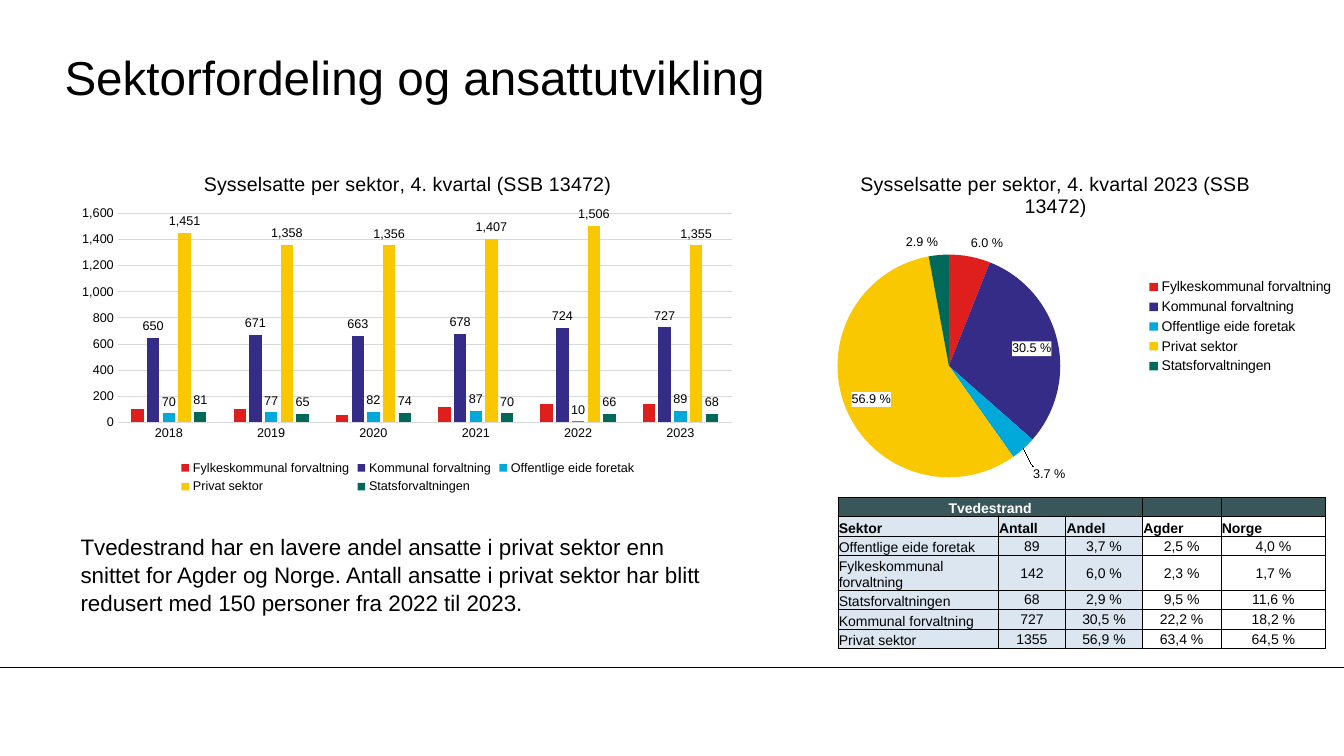
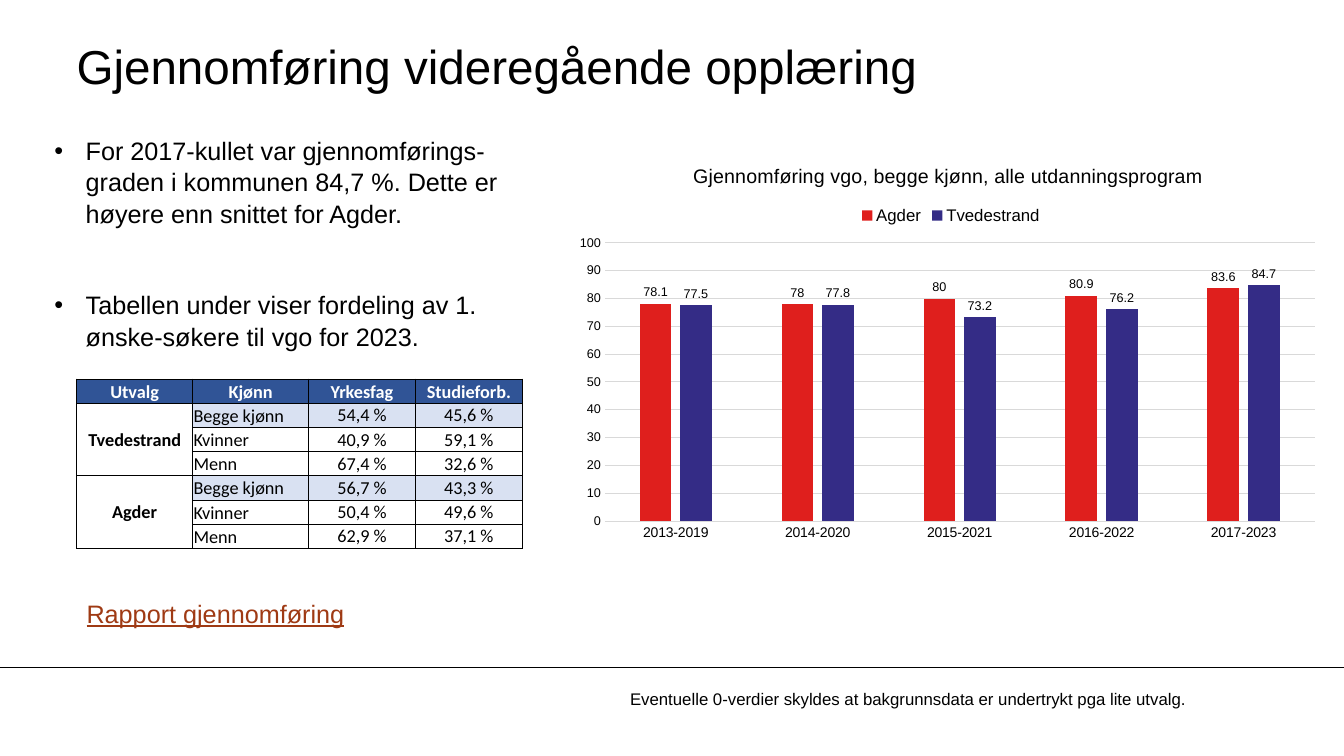
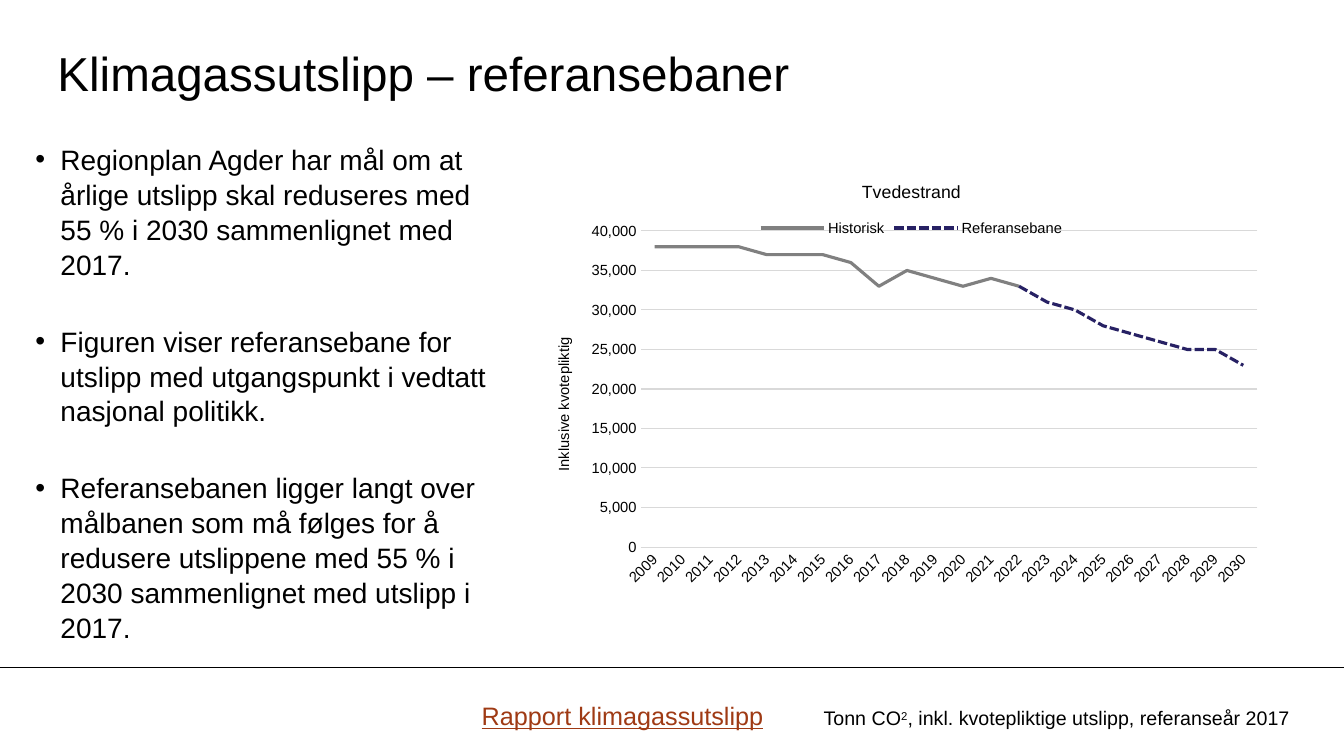
"""Build three slides on jobs, schooling and emissions in Tvedestrand."""
from dataclasses import dataclass

from lxml.etree import SubElement as sub
from pptx import Presentation
from pptx.chart.data import CategoryChartData as ChartData
from pptx.dml.color import RGBColor as RGB
from pptx.enum.chart import XL_CHART_TYPE as KIND
from pptx.enum.chart import XL_LABEL_POSITION as SPOT
from pptx.enum.chart import XL_LEGEND_POSITION as SIDE
from pptx.enum.chart import XL_TICK_MARK as TICK
from pptx.enum.dml import MSO_LINE
from pptx.enum.text import MSO_ANCHOR as ANCHOR
from pptx.enum.text import MSO_AUTO_SIZE as AUTO
from pptx.enum.text import PP_ALIGN as ALIGN
from pptx.oxml.ns import qn
from pptx.util import Pt

PX = 9144


@dataclass(frozen=True)
class Theme:
    font: str = "Arial"
    ink: str = "000000"
    white: str = "FFFFFF"
    link: str = "9F3A14"
    grid: str = "D9D9D9"
    teal: str = "39575B"
    ice: str = "DCE6F1"
    blue: str = "305496"
    pale: str = "D9E1F2"
    red: str = "DF1F1D"
    navy: str = "342C86"
    sky: str = "00A9DA"
    gold: str = "FAC800"
    green: str = "00695A"
    gray: str = "808080"
    dusk: str = "272164"
    title: int = 34
    list: int = 20
    text: int = 18
    body: int = 16
    note: int = 14
    fine: int = 12
    tick: int = 9


T = Theme()


def write(frame, text, size=T.text, color=T.ink, font=T.font, bold=False, under=False,
          align=ALIGN.LEFT, line=None, dent=0, gap=0):
    """Fill a frame; newlines part paragraphs and carets wrap superscripts."""
    frame.word_wrap = True
    for i, words in enumerate(text.split("\n")):
        para = frame.add_paragraph() if i else frame.paragraphs[0]
        para.alignment = align
        para.space_before = Pt(gap if i else 0)
        if line:
            para.line_spacing = line
        if dent:
            props = para._p.get_or_add_pPr()
            props.set("marL", str(dent * PX))
            props.set("indent", str(-dent * PX))
            sub(props, qn("a:buChar")).set("char", "•")
        for j, part in enumerate(words.split("^") if words else []):
            run = para.add_run()
            run.text = part
            look = run.font
            look.name, look.size, look.bold, look.underline = font, Pt(size), bold, under
            look.color.rgb = RGB.from_string(color)
            if j % 2:
                run._r.get_or_add_rPr().set("baseline", "30000")
        para._p.get_or_add_endParaRPr().set("sz", str(int(size * 100)))


def place(part, left, top, wide=None, high=None, inner=False):
    """Pin a chart part by fractions of the chart."""
    for old in part.findall(qn("c:layout")):
        part.remove(old)
    layout = part.makeelement(qn("c:layout"))
    spot = sub(layout, qn("c:manualLayout"))
    pairs = [("layoutTarget", "inner")] if inner else []
    if wide or part.tag == qn("c:legend"):
        pairs += [("xMode", "edge"), ("yMode", "edge")]
    pairs += [("x", left), ("y", top)]
    if wide:
        pairs += [("w", wide), ("h", high)]
    for name, value in pairs:
        sub(spot, qn("c:" + name)).set("val", str(value))
    if inner:
        part.insert(0, layout)
    else:
        part[0].addnext(layout)


deck = Presentation()
deck.slide_width, deck.slide_height = 1333 * PX, 750 * PX

slides = []
for form, left, top, text in [
    (5, 64, 38, "Sektorfordeling og ansattutvikling"),
    (1, 76, 27, "Gjennomføring videregående opplæring"),
    (1, 57, 34, "Klimagassutslipp – referansebaner"),
]:
    slide = deck.slides.add_slide(deck.slide_layouts[form])
    head = slide.shapes.title
    head.left, head.top, head.width, head.height = [n * PX for n in (left, top, 1110, 75)]
    frame = head.text_frame
    frame.auto_size, frame.vertical_anchor = AUTO.NONE, ANCHOR.MIDDLE
    frame.margin_left = frame.margin_right = frame.margin_top = frame.margin_bottom = 0
    write(frame, text, size=T.title)
    slides.append(slide)
jobs, school, climate = slides

rule = jobs.shapes.add_connector(1, 0, 662 * PX, 1333 * PX, 662 * PX)
rule.line.color.rgb, rule.line.width = RGB.from_string(T.ink), Pt(0.75)
sub(rule._element.spPr, qn("a:effectLst"))
rule._element.nvCxnSpPr.cNvPr.set("id", "20")
deck.slide_master.shapes._spTree.append(rule._element)

for slide, box, inset, text, look in [
    (school, (44, 128, 517, 222), (10, 5),
     "For 2017-kullet var gjennomførings-graden i kommunen 84,7 %. Dette er høyere enn "
     "snittet for Agder.\n"
     "Tabellen under viser fordeling av 1. ønske-søkere til vgo for 2023.",
     dict(size=T.text, dent=31, gap=43)),
    (climate, (35, 140, 462, 492), (0, 0),
     "Regionplan Agder har mål om at årlige utslipp skal reduseres med 55 % i 2030 "
     "sammenlignet med 2017.\n"
     "Figuren viser referansebane for utslipp med utgangspunkt i vedtatt nasjonal politikk.\n"
     "Referansebanen ligger langt over målbanen som må følges for å redusere utslippene med "
     "55 % i 2030 sammenlignet med utslipp i 2017.",
     dict(size=T.list, dent=25, gap=30)),
]:
    body = slide.placeholders[1]
    body.left, body.top, body.width, body.height = [n * PX for n in box]
    frame = body.text_frame
    frame.auto_size, frame.vertical_anchor = AUTO.NONE, ANCHOR.TOP
    frame.margin_left = frame.margin_right = inset[0] * PX
    frame.margin_top = frame.margin_bottom = inset[1] * PX
    write(frame, text, line=1.04, **look)

link = dict(color=T.link, under=True)
for slide, box, text, look in [
    (jobs, (70, 523, 641, 91),
     "Tvedestrand har en lavere andel ansatte i privat sektor enn snittet for Agder og Norge. "
     "Antall ansatte i privat sektor har blitt redusert med 150 personer fra 2022 til 2023.",
     dict(size=T.body)),
    (school, (615, 678, 585, 30),
     "Eventuelle 0-verdier skyldes at bakgrunnsdata er undertrykt pga lite utvalg.",
     dict(size=T.fine)),
    (school, (76, 587, 281, 40), "Rapport gjennomføring", link),
    (climate, (807, 695, 509, 34),
     "Tonn CO^2^, inkl. kvotepliktige utslipp, referanseår 2017", dict(size=T.note)),
    (climate, (468, 689, 316, 40), "Rapport klimagassutslipp", link),
]:
    note = slide.shapes.add_textbox(*[n * PX for n in box])
    write(note.text_frame, text, line=1.04, **look)

tables = [
    dict(slide=jobs, at=(831, 493), cols=(159, 67, 76, 78, 104),
         rows=(19, 20, 19, 34, 19, 20, 19), size=10, font=T.font, head=T.teal,
         merge=[(0, 0, 0, 2)],
         fill=lambda r, c: T.ice if c < 3 else None,
         bold=lambda r, c: r < 2,
         left=lambda r, c: r == 1 or c == 0,
         data=[
             ("Tvedestrand", "", "", "", ""),
             ("Sektor", "Antall", "Andel", "Agder", "Norge"),
             ("Offentlige eide foretak", "89", "3,7 %", "2,5 %", "4,0 %"),
             ("Fylkeskommunal forvaltning", "142", "6,0 %", "2,3 %", "1,7 %"),
             ("Statsforvaltningen", "68", "2,9 %", "9,5 %", "11,6 %"),
             ("Kommunal forvaltning", "727", "30,5 %", "22,2 %", "18,2 %"),
             ("Privat sektor", "1355", "56,9 %", "63,4 %", "64,5 %"),
         ]),
    dict(slide=school, at=(76, 376), cols=(115, 115, 106, 106), rows=(24,) * 7,
         size=13, font="Calibri", head=T.blue, merge=[(1, 0, 3, 0), (4, 0, 6, 0)],
         fill=lambda r, c: T.pale if c and r in (1, 4) else T.white,
         bold=lambda r, c: r == 0 or c == 0,
         left=lambda r, c: c == 1,
         data=[
             ("Utvalg", "Kjønn", "Yrkesfag", "Studieforb."),
             ("Tvedestrand", "Begge kjønn", "54,4 %", "45,6 %"),
             ("", "Kvinner", "40,9 %", "59,1 %"),
             ("", "Menn", "67,4 %", "32,6 %"),
             ("Agder", "Begge kjønn", "56,7 %", "43,3 %"),
             ("", "Kvinner", "50,4 %", "49,6 %"),
             ("", "Menn", "62,9 %", "37,1 %"),
         ]),
]
for plan in tables:
    cols, rows = plan["cols"], plan["rows"]
    area = [n * PX for n in (*plan["at"], sum(cols), sum(rows))]
    table = plan["slide"].shapes.add_table(len(rows), len(cols), *area).table
    table.first_row = table.horz_banding = False
    for col, wide in zip(table.columns, cols):
        col.width = wide * PX
    for r, (row, high) in enumerate(zip(table.rows, rows)):
        row.height = high * PX
        for c, text in enumerate(plan["data"][r]):
            cell = table.cell(r, c)
            left = r > 0 and plan["left"](r, c)
            cell.margin_left = cell.margin_right = cell.margin_top = PX
            cell.margin_bottom = 0
            cell.vertical_anchor = ANCHOR.BOTTOM if left or r == 0 else ANCHOR.MIDDLE
            props = cell._tc.get_or_add_tcPr()
            for side in "LRTB":
                edge = sub(props, qn("a:ln" + side), w=str(Pt(0.5)))
                sub(sub(edge, qn("a:solidFill")), qn("a:srgbClr"), val=T.ink)
            fill = plan["fill"](r, c) if r else plan["head"]
            if fill:
                cell.fill.solid()
                cell.fill.fore_color.rgb = RGB.from_string(fill)
            else:
                cell.fill.background()
            write(cell.text_frame, text, size=plan["size"], font=plan["font"],
                  color=T.ink if r else T.white, bold=plan["bold"](r, c),
                  align=ALIGN.LEFT if left else ALIGN.CENTER)
    for r, c, low, far in plan["merge"]:
        table.cell(r, c).merge(table.cell(low, far))

sectors = ["Fylkeskommunal forvaltning", "Kommunal forvaltning", "Offentlige eide foretak",
           "Privat sektor", "Statsforvaltningen"]
hues = [T.red, T.navy, T.sky, T.gold, T.green]
counts = [
    (100, 100, 60, 120, 140, 140),
    (650, 671, 663, 678, 724, 727),
    (70, 77, 82, 87, 10, 89),
    (1451, 1358, 1356, 1407, 1506, 1355),
    (81, 65, 74, 70, 66, 68),
]
past = [38000, 38000, 38000, 38000, 37000, 37000, 37000, 36000, 33000, 35000, 34000, 33000,
        34000, 33000]
path = [33000, 31000, 30000, 28000, 27000, 26000, 25000, 25000, 23000]

charts = [
    dict(slide=jobs, box=(70, 154, 669, 340), kind=KIND.COLUMN_CLUSTERED, form="#,##0",
         title="Sysselsatte per sektor, 4. kvartal (SSB 13472)", head=T.note,
         cats=range(2018, 2024), series=list(zip(sectors, counts, hues)), bare=1,
         side=SIDE.BOTTOM, key=9, cat=9, val=9, top=1600, step=200,
         plot=(0.07, 0.17, 0.91, 0.61)),
    dict(slide=jobs, box=(761, 154, 572, 340), kind=KIND.PIE, form='0.0" %"',
         title="Sysselsatte per sektor, 4. kvartal 2023 (SSB 13472)", head=T.note,
         cats=sectors, series=[("Andel", (6, 30.5, 3.7, 56.9, 2.9), None)],
         side=SIDE.RIGHT, key=10, plot=(0.12, 0.29, 0.39, 0.65)),
    dict(slide=school, box=(562, 145, 757, 400), kind=KIND.COLUMN_CLUSTERED, form="General",
         title="Gjennomføring vgo, begge kjønn, alle utdanningsprogram", head=T.note,
         cats=[f"{year}-{year + 6}" for year in range(2013, 2018)],
         series=[("Agder", (78.1, 78, 80, 80.9, 83.6), T.red),
                 ("Tvedestrand", (77.5, 77.8, 73.2, 76.2, 84.7), T.navy)], bare=0,
         side=SIDE.TOP, key=12, keyed=(0.38, 0.14), cat=10, val=9, top=100, step=10,
         plot=(0.05, 0.24, 0.93, 0.69)),
    dict(slide=climate, box=(531, 162, 746, 448), kind=KIND.LINE, form="#,##0",
         title="Tvedestrand", head=12.6, cats=range(2009, 2031),
         series=[("Historisk", past + [None] * 8, T.gray),
                 ("Referansebane", [None] * 13 + path, T.dusk)],
         side=SIDE.TOP, key=10.5, cat=10.5, val=10.5, top=40000, step=5000,
         plot=(0.14, 0.15, 0.82, 0.7)),
]
for plan in charts:
    data = ChartData(number_format=plan["form"])
    data.categories = [str(cat) for cat in plan["cats"]]
    for name, values, hue in plan["series"]:
        data.add_series(name, values)
    area = [n * PX for n in plan["box"]]
    kind = plan["kind"]
    chart = plan["slide"].shapes.add_chart(kind, *area, data).chart
    chart.font.name, chart.font.size = T.font, Pt(plan["key"])
    chart.font.color.rgb = RGB.from_string(T.ink)
    chart.has_title = chart.has_legend = True
    write(chart.chart_title.text_frame, plan["title"], size=plan["head"], align=ALIGN.CENTER)
    chart.chart_title.include_in_layout = False
    chart.legend.position, chart.legend.include_in_layout = plan["side"], False
    chart.legend.font.size = Pt(plan["key"])
    if "keyed" in plan:
        place(chart.legend._element, *plan["keyed"])
    place(chart._chartSpace.chart.plotArea, *plan["plot"], inner=True)
    plot = chart.plots[0]
    plot.vary_by_categories = kind == KIND.PIE

    if kind == KIND.PIE:
        pie = plot.series[0]
        for i, hue in enumerate(hues):
            point = pie.points[i]
            point.format.fill.solid()
            point.format.fill.fore_color.rgb = RGB.from_string(hue)
            label = point.data_label
            label.font.size = Pt(T.tick)
            label.position = SPOT.INSIDE_END if i in (1, 3) else SPOT.OUTSIDE_END
            tag = label._get_or_add_dLbl()
            back = tag.makeelement(qn("c:spPr"))
            sub(sub(back, qn("a:solidFill")), qn("a:srgbClr"), val=T.white)
            tag.find(qn("c:txPr")).addprevious(back)
            if i == 2:
                place(tag, 0.01, 0.04)
        continue

    cat, val = chart.category_axis, chart.value_axis
    for axis, size in [(cat, plan["cat"]), (val, plan["val"])]:
        axis.major_tick_mark = axis.minor_tick_mark = TICK.NONE
        axis.tick_labels.font.size = Pt(size)
    val.minimum_scale, val.maximum_scale, val.major_unit = 0, plan["top"], plan["step"]
    val.tick_labels.number_format = "#,##0"
    val.tick_labels.number_format_is_linked = False
    val.format.line.fill.background()
    for line in (cat.format.line, val.major_gridlines.format.line):
        line.color.rgb, line.width = RGB.from_string(T.grid), Pt(0.75)

    if kind == KIND.LINE:
        write(val.axis_title.text_frame, "Inklusive kvotepliktig", size=plan["val"])
        val.axis_title.text_frame._txBody.bodyPr.set("rot", "-5400000")
        cat._element.find(qn("c:txPr")).find(qn("a:bodyPr")).set("rot", "-2700000")
    else:
        plot.gap_width, plot.overlap = 219, -27
    for i, (series, (name, values, hue)) in enumerate(zip(plot.series, plan["series"])):
        if kind == KIND.LINE:
            line = series.format.line
            line.color.rgb, line.width = RGB.from_string(hue), Pt(2.25)
            series.smooth = False
            if i:
                line.dash_style = MSO_LINE.SQUARE_DOT
            continue
        series.format.fill.solid()
        series.format.fill.fore_color.rgb = RGB.from_string(hue)
        if i >= plan["bare"]:
            labels = series.data_labels
            labels.show_value, labels.position = True, SPOT.OUTSIDE_END
            labels.font.size = Pt(T.tick)
            labels.number_format, labels.number_format_is_linked = plan["form"], False

deck.save("out.pptx")
